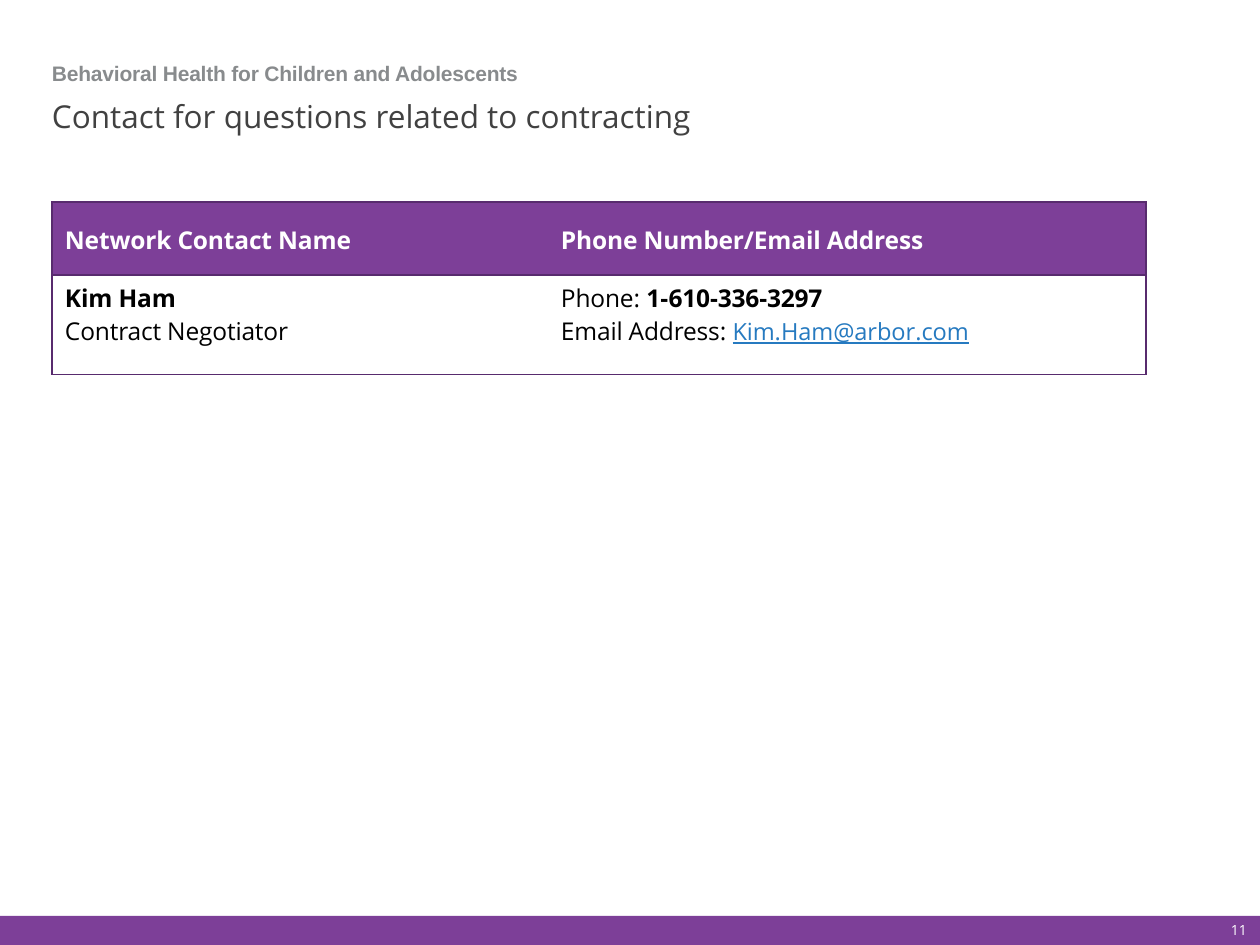
from lxml import etree
from pptx import Presentation, util as u
from pptx.dml.color import RGBColor
from pptx.enum import shapes, text
from pptx.oxml.ns import qn

COLORS = {
    "purple": "7D3F98",
    "border": "582B6E",
    "title": "414141",
    "section": "888B8D",
    "link": "267AC0",
    "black": "000000",
    "white": "FFFFFF",
}
EMU_PER_PX = 914400 / 126
NO_GRID_STYLE = "{2D5ABB26-0587-4C30-8999-92F81FD0307C}"


def px(length):
    return u.Emu(round(length * EMU_PER_PX))


def rgb(name):
    return RGBColor.from_string(COLORS[name])


def assign(target, values):
    for key, value in values.items():
        setattr(target, key, value)


class SlideBuilder:
    base = {"name": "Open Sans", "size": 14, "bold": False, "color": "black"}

    def __init__(self, slide):
        self.slide = slide

    def write_run(self, paragraph, wording, style):
        values = {**self.base, **style}
        color = values.pop("color")
        spacing = values.pop("spacing", 0)
        values["size"] = u.Pt(values["size"])
        run = paragraph.add_run()
        run.text = wording
        assign(run.font, values)
        run.font.color.rgb = rgb(color)
        if spacing:
            run.font._element.set("spc", str(spacing))

    def write_lines(self, frame, lines, layout, indent=0):
        for index, runs in enumerate(lines):
            paragraph = frame.add_paragraph() if index else frame.paragraphs[0]
            assign(paragraph, layout)
            if indent:
                properties = paragraph._p.get_or_add_pPr()
                properties.set("marL", str(px(indent)))
                properties.set("indent", "0")
            for wording, style in runs:
                self.write_run(paragraph, wording, style)

    def fill_frame(self, shape, wording, style, frame_format, layout):
        frame = shape.text_frame
        margins = dict.fromkeys(
            ("margin_left", "margin_top", "margin_right", "margin_bottom"), 0)
        assign(frame, {"word_wrap": True, "auto_size": text.MSO_AUTO_SIZE.NONE,
                       **margins, **frame_format})
        self.write_lines(frame, [[(wording, style)]], layout)

    def title(self, box, wording, style):
        heading = self.slide.shapes.title
        assign(heading, dict(zip(("left", "top", "width", "height"), map(px, box))))
        self.fill_frame(heading, wording, style,
                        {"vertical_anchor": text.MSO_ANCHOR.TOP},
                        {"alignment": text.PP_ALIGN.LEFT, "line_spacing": 0.9})

    def label(self, box, wording, style, frame_format, align):
        textbox = self.slide.shapes.add_textbox(*map(px, box))
        self.fill_frame(textbox, wording, style, frame_format, {"alignment": align})

    def bar(self, box, color):
        band = self.slide.shapes.add_shape(shapes.MSO_SHAPE.RECTANGLE, *map(px, box))
        band.shadow.inherit = False
        band.fill.solid()
        band.fill.fore_color.rgb = rgb(color)
        band.line.fill.background()

    def borders(self, cell, sides):
        properties = cell._tc.get_or_add_tcPr()
        for position, side in enumerate(sides):
            line = etree.Element(qn(f"a:ln{side}"), w=str(u.Pt(0.75)))
            fill = etree.SubElement(line, qn("a:solidFill"))
            etree.SubElement(fill, qn("a:srgbClr"), val=COLORS["border"])
            properties.insert(position, line)

    def table(self, origin, widths, heights, indents, rows):
        frame = self.slide.shapes.add_table(
            len(heights), len(widths), *map(px, (*origin, sum(widths), sum(heights))))
        grid = frame.table
        assign(grid, {"first_row": False, "horz_banding": False})
        grid._tbl.tblPr.find(qn("a:tableStyleId")).text = NO_GRID_STYLE
        for column, width in zip(grid.columns, widths):
            column.width = px(width)
        for row_index, (height, (fill, top, cells)) in enumerate(zip(heights, rows)):
            grid.rows[row_index].height = px(height)
            for column_index, lines in enumerate(cells):
                cell = grid.cell(row_index, column_index)
                assign(cell, {"margin_left": 0, "margin_top": px(top),
                              "margin_right": 0, "margin_bottom": 0})
                if fill:
                    cell.fill.solid()
                    cell.fill.fore_color.rgb = rgb(fill)
                else:
                    cell.fill.background()
                outer = "R" if column_index else "L"
                self.borders(cell, (outer, "T", "B"))
                self.write_lines(cell.text_frame, lines, {}, indents[column_index])


def main():
    deck = Presentation()
    deck.slide_width, deck.slide_height = px(1260), px(945)
    builder = SlideBuilder(deck.slides.add_slide(deck.slide_layouts[5]))

    header = {"color": "white", "bold": True, "spacing": -10}
    strong = {"bold": True, "spacing": -10}
    link = {"size": 13.5, "color": "link", "underline": True}
    plain = {"spacing": -10}

    builder.bar((0, 916, 1260, 30), "purple")
    builder.title((52, 101, 1134, 53), "Contact for questions related to contracting",
                  {"size": 18, "color": "title"})
    builder.label((52, 48, 1134, 38), "Behavioral Health for Children and Adolescents",
                  {"name": "Arial", "size": 12, "bold": True,
                   "color": "section", "spacing": -10},
                  {"vertical_anchor": text.MSO_ANCHOR.BOTTOM}, text.PP_ALIGN.LEFT)
    builder.label((1158, 915, 102, 30), "11", {"size": 8, "color": "white"},
                  {"vertical_anchor": text.MSO_ANCHOR.MIDDLE, "margin_right": px(13)},
                  text.PP_ALIGN.RIGHT)
    builder.table(
        (52, 202), (494, 600), (73, 100), (13, 15),
        [
            ("purple", 21, [
                [[("Network Contact Name", header)]],
                [[("Phone Number/Email Address", header)]],
            ]),
            (None, 6, [
                [[("Kim Ham", strong)], [("Contract Negotiator", plain)]],
                [
                    [("Phone: ", plain), ("1-", {"bold": True, "spacing": 10}),
                     ("610-336-3297", strong)],
                    [("Email Address: ", plain), ("Kim.Ham@arbor.com", link)],
                ],
            ]),
        ])
    deck.save("out.pptx")


if __name__ == "__main__":
    main()
